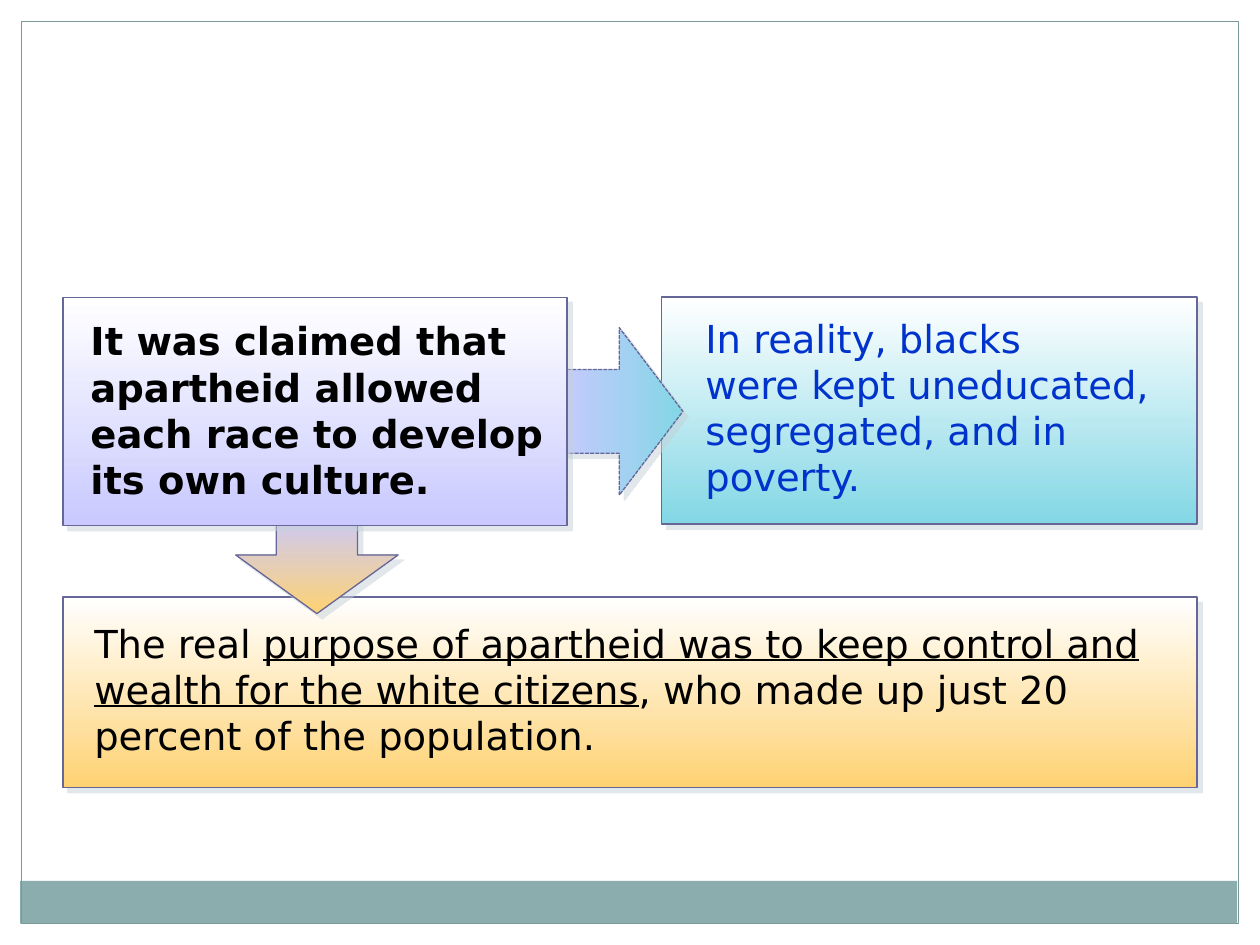
from dataclasses import dataclass

from lxml.etree import SubElement
from pptx import Presentation
from pptx.dml.color import RGBColor
from pptx.enum.dml import MSO_LINE
from pptx.enum.shapes import MSO_SHAPE
from pptx.enum.text import MSO_AUTO_SIZE
from pptx.oxml.ns import qn
from pptx.util import Inches, Pt

WIDE, HIGH = Inches(10), Inches(7.5)
DOWN, RIGHT = 270, 0  # gradient directions


@dataclass(frozen=True)
class Theme:
    font: str = "DejaVu Sans"
    size: int = 22
    white: str = "FFFFFF"
    black: str = "000000"
    blue: str = "0033CC"
    lilac: str = "C9C9FF"
    aqua: str = "83D7E5"
    gold: str = "FED273"
    edge: str = "666699"
    shade: str = "C5D1D7"
    band: str = "8CADAE"
    frame: str = "7C999A"


@dataclass(frozen=True)
class Area:
    """Place and size in percent of the slide."""
    left: float
    top: float
    width: float
    height: float

    def emu(self) -> tuple:
        return (int(WIDE * self.left / 100), int(HIGH * self.top / 100),
                int(WIDE * self.width / 100), int(HIGH * self.height / 100))


@dataclass(frozen=True)
class Block:
    area: Area
    start: str
    end: str
    kind: MSO_SHAPE = MSO_SHAPE.RECTANGLE
    angle: int = DOWN
    line: float = 1
    head: float = 0
    dash: bool = False


@dataclass(frozen=True)
class Label:
    area: Area
    words: tuple  # every second piece is underlined
    color: str
    bold: bool = False


THEME = Theme()


def rgb(code: str) -> RGBColor:
    return RGBColor.from_string(code)


def add_shade(shape) -> None:
    effects = SubElement(shape._element.spPr, qn("a:effectLst"))
    outer = SubElement(effects, qn("a:outerShdw"), blurRad="0",
                       dist=str(int(Pt(4.2))), dir=str(45 * 60000),
                       algn="ctr", rotWithShape="0")
    color = SubElement(outer, qn("a:srgbClr"), val=THEME.shade)
    SubElement(color, qn("a:alpha"), val="50000")


def draw_block(slide, block: Block) -> None:
    shape = slide.shapes.add_shape(block.kind, *block.area.emu())
    if block.head:
        shape.adjustments[0] = 0.5
        shape.adjustments[1] = block.head
    shape.fill.gradient()
    shape.fill.gradient_angle = block.angle
    for stop, code in zip(shape.fill.gradient_stops, (block.start, block.end)):
        stop.color.rgb = rgb(code)
    shape.line.color.rgb = rgb(THEME.edge)
    shape.line.width = Pt(block.line)
    if block.dash:
        shape.line.dash_style = MSO_LINE.SQUARE_DOT
    add_shade(shape)


def draw_label(slide, label: Label) -> None:
    frame = slide.shapes.add_textbox(*label.area.emu()).text_frame
    frame.word_wrap = True
    frame.auto_size = MSO_AUTO_SIZE.SHAPE_TO_FIT_TEXT
    para = frame.paragraphs[0]
    for i, piece in enumerate(label.words):
        if piece == "\v":
            para.add_line_break()
            continue
        run = para.add_run()
        run.text = piece
        font = run.font
        font.name, font.size = THEME.font, Pt(THEME.size)
        font.bold = label.bold
        font.underline = i % 2 == 1
        font.color.rgb = rgb(label.color)


def draw_frame(slide) -> None:
    band = slide.shapes.add_shape(
        MSO_SHAPE.RECTANGLE, *Area(1.6, 93.2, 96.6, 4.53).emu())
    band.fill.solid()
    band.fill.fore_color.rgb = rgb(THEME.band)
    band.line.fill.background()
    edge = slide.shapes.add_shape(
        MSO_SHAPE.RECTANGLE, *Area(1.7, 2.27, 96.6, 95.47).emu())
    edge.fill.background()
    edge.line.color.rgb = rgb(THEME.frame)
    edge.line.width = Pt(0.75)
    for shape in (band, edge):
        shape.shadow.inherit = False


# Boxes, arrows and texts, from back to front
ITEMS = (
    Block(Area(52.5, 31.47, 42.5, 24), THEME.white, THEME.aqua),
    Label(Area(55, 32.67, 39.2, 20.93),
          ("In reality, blacks ", "\v",
           "were kept uneducated, segregated, and in poverty."), THEME.blue),
    Block(Area(5, 63.2, 90, 20.13), THEME.white, THEME.gold),
    Label(Area(6.5, 64.93, 86.5, 16),
          ("The real ",
           "purpose of apartheid was to keep control and wealth "
           "for the white citizens",
           ", who made up just 20 percent of the population."), THEME.black),
    Block(Area(44.2, 34.67, 10, 17.73), THEME.lilac, THEME.aqua,
          MSO_SHAPE.RIGHT_ARROW, RIGHT, 0.75, 0.505, True),
    Block(Area(18.7, 54.13, 12.9, 10.8), THEME.lilac, THEME.gold,
          MSO_SHAPE.DOWN_ARROW, DOWN, 0.75, 0.575),
    Block(Area(5, 31.47, 40, 24.13), THEME.white, THEME.lilac),
    Label(Area(6.2, 32.93, 38, 20.93),
          ("It was claimed that apartheid allowed each race to develop "
           "its own culture.",), THEME.black, True),
)


def main() -> None:
    deck = Presentation()
    deck.slide_width, deck.slide_height = WIDE, HIGH
    slide = deck.slides.add_slide(deck.slide_layouts[6])
    draw_frame(slide)
    for item in ITEMS:
        if isinstance(item, Block):
            draw_block(slide, item)
        else:
            draw_label(slide, item)
    deck.save("out.pptx")


if __name__ == "__main__":
    main()
